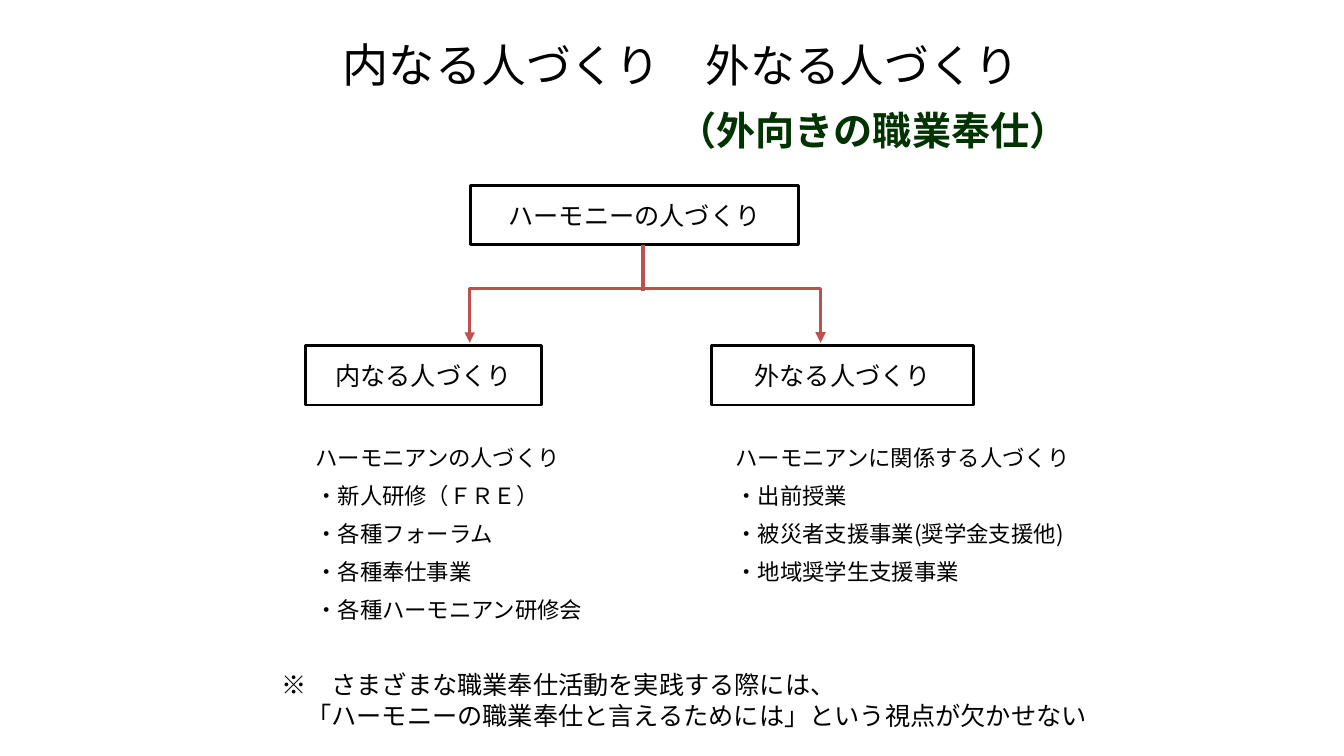
from dataclasses import dataclass

import lxml.etree
import pptx
import pptx.dml.color
import pptx.enum.shapes
import pptx.enum.text
import pptx.oxml.ns
import pptx.util

Pt = pptx.util.Pt
qn = pptx.oxml.ns.qn
Align = pptx.enum.text.PP_ALIGN
Connector = pptx.enum.shapes.MSO_CONNECTOR

COLORS = {"ink": "000000", "green": "003300", "arrow": "C0504D"}
FONT = "Noto Sans CJK JP"


@dataclass
class Run:
    text: str
    size: float
    color: str = "ink"
    bold: bool = False


@dataclass
class Line:
    runs: list[Run]
    indent: float = 0
    format: dict | None = None


@dataclass
class Box:
    text: str
    left: float
    top: float
    width: float
    height: float = 42.3


@dataclass
class Fork:
    """A bar with an arrow down at each end."""
    left: float
    right: float
    bar: float
    tip: float


@dataclass
class TextBlock:
    left: float
    top: float
    width: float
    height: float
    lines: list[Line]


def rgb(name: str) -> pptx.dml.color.RGBColor:
    return pptx.dml.color.RGBColor.from_string(COLORS[name])


def write_line(paragraph, line: Line) -> None:
    for name, value in (line.format or {}).items():
        setattr(paragraph, name, value)
    if line.indent:
        properties = paragraph._p.get_or_add_pPr()
        properties.set("marL", str(int(Pt(line.indent))))
    for item in line.runs:
        run = paragraph.add_run()
        run.text = item.text
        font_format = {"size": Pt(item.size), "bold": item.bold, "name": FONT}
        for name, value in font_format.items():
            setattr(run.font, name, value)
        run.font.color.rgb = rgb(item.color)
        # East Asian typeface
        east_asian = lxml.etree.SubElement(run._r.get_or_add_rPr(), qn("a:ea"))
        east_asian.set("typeface", FONT)


def draw_text(slide, block: TextBlock) -> None:
    shape = slide.shapes.add_textbox(
        Pt(block.left), Pt(block.top), Pt(block.width), Pt(block.height))
    frame = shape.text_frame
    frame.word_wrap = True
    for index, line in enumerate(block.lines):
        paragraph = frame.add_paragraph() if index else frame.paragraphs[0]
        write_line(paragraph, line)


def draw_box(slide, box: Box) -> None:
    shape = slide.shapes.add_shape(
        pptx.enum.shapes.MSO_SHAPE.RECTANGLE,
        Pt(box.left), Pt(box.top), Pt(box.width), Pt(box.height))
    shape.shadow.inherit = False
    shape.fill.background()
    shape.line.color.rgb = rgb("ink")
    shape.line.width = Pt(2)
    frame = shape.text_frame
    frame.word_wrap = False
    frame.vertical_anchor = pptx.enum.text.MSO_ANCHOR.MIDDLE
    write_line(frame.paragraphs[0],
               Line([Run(box.text, 18)], format={"alignment": Align.CENTER}))


def draw_connector(slide, kind, start: tuple, end: tuple, ends: tuple = ()):
    connector = slide.shapes.add_connector(
        kind, *(Pt(value) for value in start + end))
    connector.line.color.rgb = rgb("arrow")
    connector.line.width = Pt(2.5)
    for name in ends:
        arrowhead = lxml.etree.SubElement(connector.line._get_or_add_ln(), qn(name))
        arrowhead.set("type", "triangle")
    lxml.etree.SubElement(connector._element.spPr, qn("a:effectLst"))
    return connector


def draw_fork(slide, fork: Fork) -> None:
    # An upright elbow of almost no width, turned by 270 degrees
    middle, half = (fork.left + fork.right) / 2, (fork.right - fork.left) / 2
    width = 0.1
    connector = draw_connector(
        slide, Connector.ELBOW,
        (middle - width / 2, fork.tip - half), (middle + width / 2, fork.tip + half),
        ("a:headEnd", "a:tailEnd"))
    connector.rotation = 270
    properties = connector._element.spPr
    properties.find(qn("a:xfrm")).set("rot", str(270 * 60000))
    adjustments = properties.find(qn("a:prstGeom")).get_or_add_avLst()
    guide = lxml.etree.SubElement(adjustments, qn("a:gd"))
    guide.set("name", "adj1")
    guide.set("fmla", f"val {round((fork.tip - fork.bar) / width * 100000)}")


def list_block(left: float, width: float, texts: list[str]) -> TextBlock:
    spacing = {"line_spacing": Pt(19.2), "space_after": Pt(8)}
    return TextBlock(left, 313.6, width, 143,
                     [Line([Run(text, 16)], format=spacing) for text in texts])


# Heading
HEADING = TextBlock(169.9, 16.3, 621.4, 100, [
    Line([Run("内なる", 33), Run("人づくり　外なる人づくり", 32)], 12,
         {"alignment": Align.CENTER, "line_spacing": Pt(46), "space_after": Pt(3.5)}),
    Line([Run("（外向きの職業奉仕）", 28, "green", True)], 286,
         {"alignment": Align.CENTER, "line_spacing": Pt(40)}),
])

# Tree
BOXES = [
    Box("ハーモニーの人づくり", 336.2, 132.5, 234),
    Box("内なる人づくり", 218.2, 247, 168.5),
    Box("外なる人づくり", 508.3, 247, 187.2),
]
STEM = ((459.4, 175), (459.4, 208))
FORK = Fork(left=335.5, right=586.1, bar=210.5, tip=244.8)

# Lists under the branches
LISTS = [
    list_block(218.2, 234.7, [
        "ハーモニアンの人づくり", "・新人研修（ＦＲＥ）", "・各種フォーラム",
        "・各種奉仕事業", "・各種ハーモニアン研修会"]),
    list_block(518.4, 278, [
        "ハーモニアンに関係する人づくり", "・出前授業",
        "・被災者支援事業(奨学金支援他)", "・地域奨学生支援事業"]),
]

# Closing remark
REMARK_FORMAT = {"line_spacing": Pt(22)}
REMARK = TextBlock(193.7, 474, 612, 51.1, [
    Line([Run("※　さまざまな職業奉仕活動を実践する際には、", 18)], 0, REMARK_FORMAT),
    Line([Run("「ハーモニーの職業奉仕と言えるためには」という視点が欠かせない", 18)],
         18, REMARK_FORMAT),
])


def main() -> None:
    presentation = pptx.Presentation()
    presentation.slide_width = Pt(960)
    presentation.slide_height = Pt(540)
    slide = presentation.slides.add_slide(presentation.slide_layouts[6])
    draw_text(slide, HEADING)
    for box in BOXES:
        draw_box(slide, box)
    draw_connector(slide, Connector.STRAIGHT, *STEM)
    draw_fork(slide, FORK)
    for block in [*LISTS, REMARK]:
        draw_text(slide, block)
    presentation.save("out.pptx")


if __name__ == "__main__":
    main()
